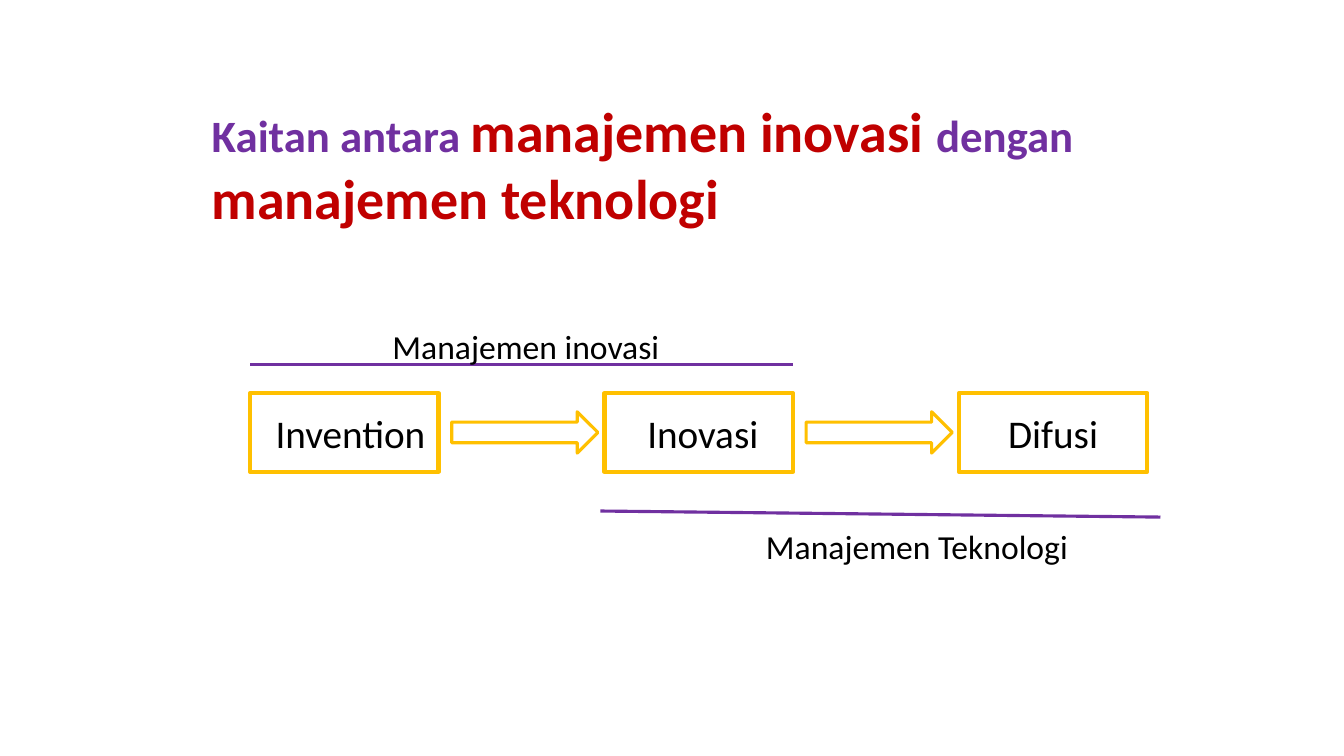
from collections import namedtuple

from lxml import etree
from pptx import Presentation, util as u
from pptx.dml import color
from pptx.enum import shapes, text
from pptx.oxml import ns

Box = namedtuple("Box", "left top width height")

FONT = "Calibri"
PURPLE, RED, GOLD, BLACK = "7030A0", "C00000", "FFC000", "000000"
TITLE_BOX = Box(2, 0.91, 9.39, 1.45)
FLOW_BOX = Box(2.48, 3.18, 8.9, 2.49)

TITLE_RUNS = [
    ("Kaitan antara ", 32, PURPLE),
    ("manajemen inovasi ", 40, RED),
    ("dengan ", 32, PURPLE),
    ("manajemen teknologi", 40, RED),
]
# Stage name and the small shift of its wording to the right of centre
STAGES = [("Invention", 0.06), ("Inovasi", 0.04), ("Difusi", 0)]
STAGE_WIDTH, STAGE_HEIGHT = 1.87, 0.78
ARROW_WIDTH, ARROW_HEIGHT = 1.45, 0.41


def rgb(hex_color):
    return color.RGBColor.from_string(hex_color)


def inches(box):
    return [u.Inches(length) for length in box]


def add_run(paragraph, wording, size, hex_color, bold=False):
    run = paragraph.add_run()
    run.text = wording
    run.font.name, run.font.size, run.font.bold = FONT, u.Pt(size), bold
    run.font.color.rgb = rgb(hex_color)


def add_outline(slide, kind, box, line_width):
    outline = slide.shapes.add_shape(kind, *inches(box))
    outline.shadow.inherit = False
    outline.fill.background()
    outline.line.color.rgb = rgb(GOLD)
    outline.line.width = u.Pt(line_width)
    return outline


def add_title(slide, box):
    title = slide.shapes.title
    title.left, title.top, title.width, title.height = inches(box)
    frame = title.text_frame
    frame.word_wrap = True
    frame.auto_size = text.MSO_AUTO_SIZE.NONE
    frame.vertical_anchor = text.MSO_ANCHOR.TOP
    heading = frame.paragraphs[0]
    heading.alignment = text.PP_ALIGN.LEFT
    for wording, size, hex_color in TITLE_RUNS:
        add_run(heading, wording, size, hex_color, bold=True)


def add_stage(slide, box, name, shift):
    frame = add_outline(slide, shapes.MSO_SHAPE.RECTANGLE, box, 3).text_frame
    frame.word_wrap = False
    frame.margin_left = u.Inches(0.1 + 2 * shift)
    frame.vertical_anchor = text.MSO_ANCHOR.MIDDLE
    frame.paragraphs[0].alignment = text.PP_ALIGN.CENTER
    add_run(frame.paragraphs[0], name, 28, BLACK)


def add_span(slide, start, end, label, label_box):
    """Draw a line along the stages that one field of management covers."""
    line = slide.shapes.add_connector(
        shapes.MSO_CONNECTOR.STRAIGHT, *inches(start + end))
    line.line.color.rgb = rgb(PURPLE)
    line.line.width = u.Pt(2.25)
    etree.SubElement(line._element.spPr, ns.qn("a:effectLst"))
    frame = slide.shapes.add_textbox(*inches(label_box)).text_frame
    frame.word_wrap = True
    frame.paragraphs[0].alignment = text.PP_ALIGN.CENTER
    add_run(frame.paragraphs[0], label, 24, BLACK)


def add_flow(slide, box):
    pitch = (box.width - STAGE_WIDTH) / (len(STAGES) - 1)
    stage_top = box.top + 0.72
    arrow_top = stage_top + (STAGE_HEIGHT - ARROW_HEIGHT) / 2
    right = box.left + box.width
    for column, (name, shift) in enumerate(STAGES):
        left = box.left + column * pitch
        add_stage(slide, Box(left, stage_top, STAGE_WIDTH, STAGE_HEIGHT),
                  name, shift)
        if column < len(STAGES) - 1:
            arrow_left = left + STAGE_WIDTH + 0.13
            add_outline(slide, shapes.MSO_SHAPE.RIGHT_ARROW,
                        Box(arrow_left, arrow_top, ARROW_WIDTH, ARROW_HEIGHT),
                        2.25)
    line_y = box.top + 0.44
    add_span(slide, (box.left, line_y),
             (box.left + pitch + STAGE_WIDTH, line_y),
             "Manajemen inovasi", Box(box.left + 1.26, box.top, 2.95, 0.5))
    add_span(slide, (box.left + pitch - 0.04, box.top + 1.89),
             (right + 0.13, box.top + 1.95),
             "Manajemen Teknologi", Box(right - 4.02, box.top + 1.99, 3.47, 0.5))


def main():
    deck = Presentation()
    deck.slide_width, deck.slide_height = u.Inches(13.33), u.Inches(7.5)
    slide = deck.slides.add_slide(deck.slide_layouts.get_by_name("Title Only"))
    add_title(slide, TITLE_BOX)
    add_flow(slide, FLOW_BOX)
    deck.save("out.pptx")


if __name__ == "__main__":
    main()
